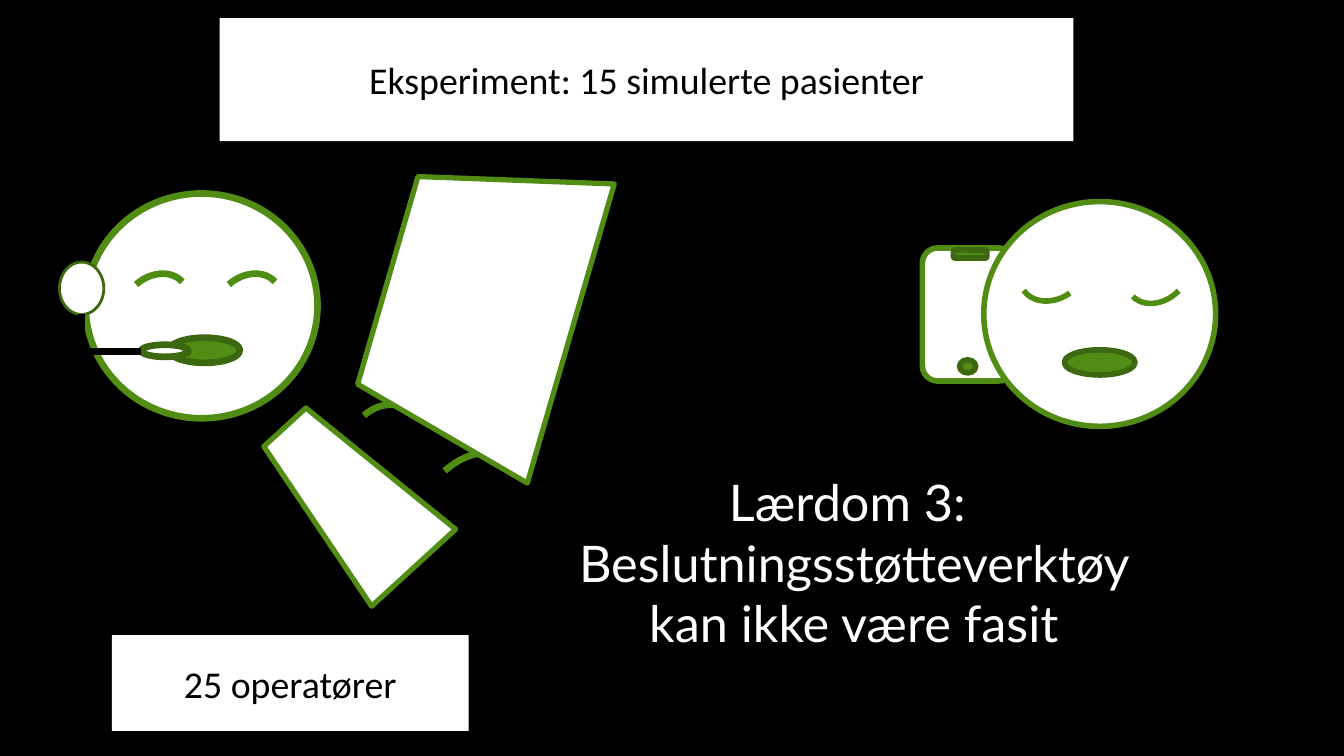
from pptx import Presentation
from pptx import util as u
from pptx.dml.color import RGBColor
from pptx.enum import shapes, text

SLIDE_WIDTH, SLIDE_HEIGHT = u.Inches(13.333), u.Inches(7.5)
CELL = SLIDE_HEIGHT / 75  # square grid: 75 rows, a little over 133 columns

BLACK, WHITE = "000000", "FFFFFF"
GREEN, EYE_GREEN, DARK_GREEN = "518C15", "4F8C12", "3C6810"
KIND = shapes.MSO_SHAPE


def cells(*counts):
    return [u.Emu(round(count * CELL)) for count in counts]


def paint(target, colour):
    """Give a fill or a font one solid colour."""
    if hasattr(target, "solid"):
        target.solid()
        target.fore_color.rgb = RGBColor.from_string(colour)
    else:
        target.color.rgb = RGBColor.from_string(colour)


def draw(slide, kind, box, fill=None, line=None, weight=4, turn=0):
    """Add a preset shape; box is left, top, width, height in grid cells."""
    shape = slide.shapes.add_shape(kind, *cells(*box))
    shape.shadow.inherit = False
    shape.rotation = turn
    if fill:
        paint(shape.fill, fill)
    else:
        shape.fill.background()
    if line:
        paint(shape.line.fill, line)
        shape.line.width = u.Pt(weight)
    else:
        shape.line.fill.background()
    return shape


def write(holder, words, font, size, colour):
    """Fill a shape with centred text, one paragraph per line of words."""
    frame = holder.text_frame
    frame.word_wrap = True
    frame.vertical_anchor = text.MSO_ANCHOR.MIDDLE
    frame.text = words
    for paragraph in frame.paragraphs:
        paragraph.alignment = text.PP_ALIGN.CENTER
        for run in paragraph.runs:
            run.font.name = font
            run.font.size = u.Pt(size)
            paint(run.font, colour)


def label(slide, box, words):
    write(draw(slide, KIND.RECTANGLE, box, WHITE), words, "Calibri", 27, BLACK)


def brow(slide, left, top, turn, weight, width=7.2, height=5.7):
    draw(slide, KIND.ARC, (left, top, width, height), None, EYE_GREEN, weight, turn)


def face(slide, left, top, weight, eyes, mouth):
    """Draw a head; eyes (x, y, turn) and mouth (x, y) count from its corner."""
    draw(slide, KIND.OVAL, (left, top, 23, 22.3), WHITE, GREEN, weight)
    for x, y, turn in eyes:
        brow(slide, left + x, top + y, turn, weight)
    x, y = mouth
    draw(slide, KIND.OVAL, (left + x, top + y, 7, 2.5), GREEN, DARK_GREEN, weight)


def headset(slide):
    draw(slide, KIND.OVAL, (5.5, 26.4, 5.2, 4.4), WHITE, DARK_GREEN, 2, 90)
    draw(slide, KIND.OVAL, (14, 34.2, 4.7, 1.2), WHITE, DARK_GREEN, 4.75)
    boom = slide.shapes.add_connector(
        shapes.MSO_CONNECTOR.ELBOW, *cells(14, 34.9, 8.1, 31.2))
    paint(boom.line.fill, BLACK)
    boom.line.width = u.Pt(4.75)
    properties = boom._element.spPr
    properties.prstGeom.set("prst", "bentConnector2")
    properties.append(properties.makeelement(
        "{http://schemas.openxmlformats.org/drawingml/2006/main}effectLst", {}))


def operator(slide):
    face(slide, 8.5, 19.2, 4.75,
         eyes=[(3.3, 8.3, 318.3), (12.5, 8.3, 318.3)], mouth=(8.3, 14.3))
    headset(slide)


def caller(slide):
    draw(slide, KIND.ROUNDED_RECTANGLE, (91.5, 24.6, 9.1, 13.2), WHITE, GREEN)
    face(slide, 97.6, 20, 4,
         eyes=[(3.3, 3.9, 145), (13.7, 4, 134.5)], mouth=(8, 14.7))
    draw(slide, KIND.OVAL, (95.2, 35.7, 1.6, 1.3), GREEN, DARK_GREEN)
    draw(slide, KIND.ROUNDED_RECTANGLE, (94.6, 24.8, 3.3, 0.8), GREEN, DARK_GREEN)


def laptop(slide):
    brow(slide, 34.4, 40.5, 318.3, 4.75)
    brow(slide, 41.1, 45.9, 318.3, 4.75, 10.3, 6.4)
    for box, turn in [((32.1, 21, 30.9, 18.9), 286.2), ((29, 39.9, 11.3, 18.9), 317.5)]:
        draw(slide, KIND.TRAPEZOID, box, WHITE, GREEN, 3.75, turn)


def lesson(slide):
    box = slide.shapes.add_textbox(*cells(56.8, 46.1, 55.8, 19.3))
    write(box, "Lærdom 3: \nBeslutningsstøtteverktøy kan ikke være fasit",
          "Lato", 36, WHITE)
    frame = box.text_frame
    frame.auto_size = text.MSO_AUTO_SIZE.SHAPE_TO_FIT_TEXT
    frame.margin_left = frame.margin_right = u.Inches(0.06)
    frame.margin_top = frame.margin_bottom = u.Inches(0.06)


def main():
    deck = Presentation()
    deck.slide_width, deck.slide_height = SLIDE_WIDTH, SLIDE_HEIGHT
    slide = deck.slides.add_slide(deck.slide_layouts.get_by_name("Blank"))
    paint(slide.background.fill, BLACK)

    label(slide, (21.8, 1.8, 84.7, 12.2), "Eksperiment: 15 simulerte pasienter")
    operator(slide)
    caller(slide)
    laptop(slide)
    label(slide, (11.1, 63, 35.4, 9.5), "25 operatører")
    lesson(slide)
    deck.save("out.pptx")


if __name__ == "__main__":
    main()
